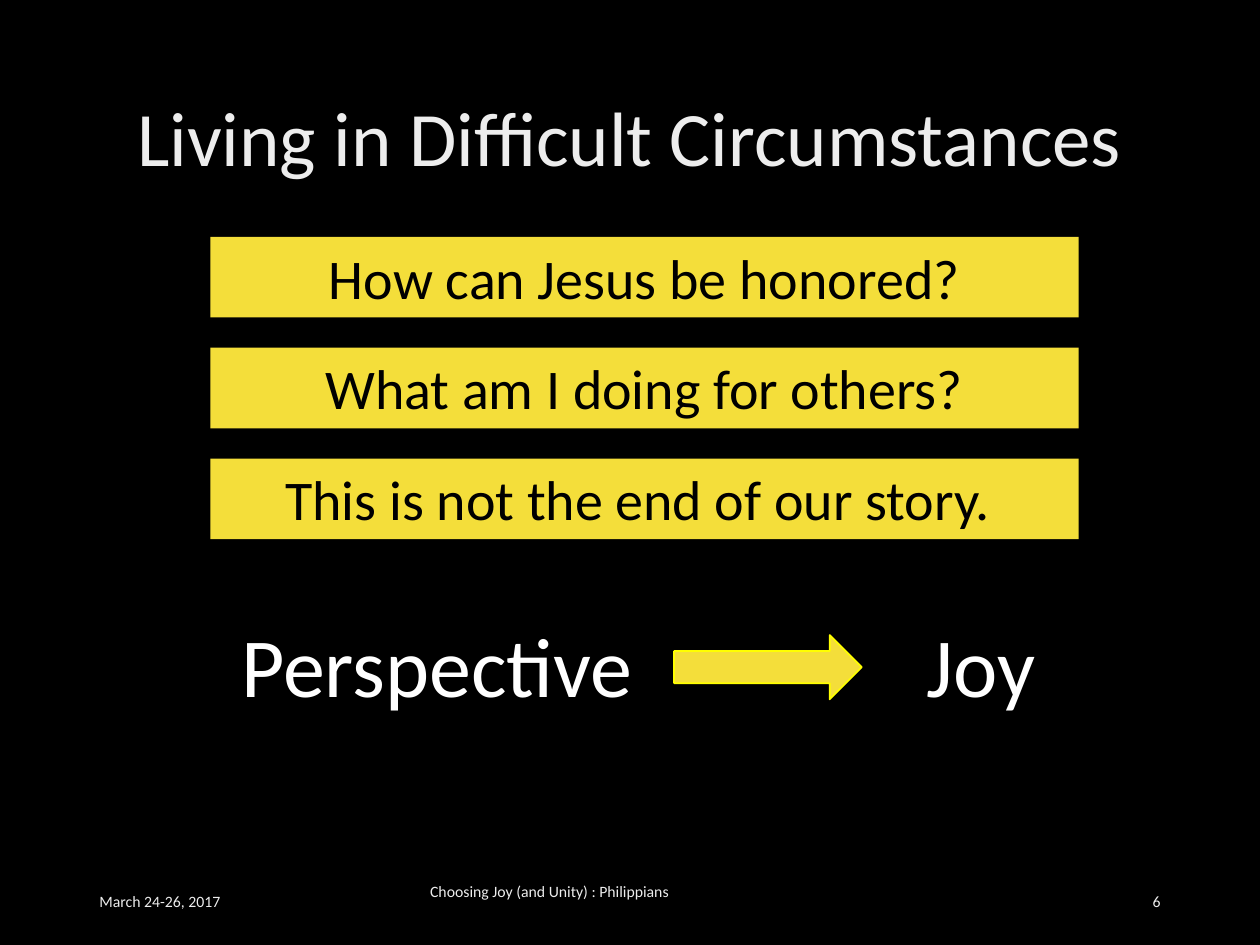
"""Builds the slide on living in difficult circumstances."""
import pptx
import pptx.util
import pptx.dml.color
import pptx.enum.shapes
import pptx.enum.text
from pptx.util import Inches

SHAPE = pptx.enum.shapes.MSO_SHAPE
ANCHOR = pptx.enum.text.MSO_ANCHOR
ALIGN = pptx.enum.text.PP_ALIGN
YELLOW = "F4DE3A"
PALE = "EDEDED"


def rgb(value):
    return pptx.dml.color.RGBColor.from_string(value)


def write(sp, text, size=9, color=PALE, align=ALIGN.CENTER,
          anchor=ANCHOR.MIDDLE, wrap=True, spacing=None):
    tf = sp.text_frame
    tf.word_wrap = wrap
    tf.vertical_anchor = anchor
    p = tf.paragraphs[0]
    p.alignment = align
    p.line_spacing = spacing
    r = p.add_run()
    r.text = text
    r.font.name = "Calibri"
    r.font.size = pptx.util.Pt(size)
    r.font.color.rgb = rgb(color)


prs = pptx.Presentation()
prs.slide_width = Inches(10)
prs.slide_height = Inches(7.5)
s = prs.slides.add_slide(prs.slide_layouts[6])
s.background.fill.solid()
s.background.fill.fore_color.rgb = rgb("000000")

sp = s.shapes.add_textbox(Inches(0.69), Inches(0.4), Inches(8.62), Inches(1.45))
write(sp, "Living in Difficult Circumstances", size=44, spacing=0.9)

questions = ["How can Jesus be honored?", "What am I doing for others?",
             "This is not the end of our story. "]
for i, question in enumerate(questions):
    sp = s.shapes.add_shape(SHAPE.RECTANGLE, Inches(1.67), Inches(1.88 + 0.88 * i),
                            Inches(6.89), Inches(0.64))
    sp.shadow.inherit = False
    sp.fill.solid()
    sp.fill.fore_color.rgb = rgb(YELLOW)
    sp.line.fill.background()
    write(sp, question, size=32, color="000000", anchor=ANCHOR.TOP)

for word, left, width in [("Perspective", 1.79, 3.36), ("Joy", 7.24, 1.09)]:
    sp = s.shapes.add_textbox(Inches(left), Inches(4.83), Inches(width), Inches(0.88))
    tf = sp.text_frame
    tf.margin_left = tf.margin_right = Inches(0.07)
    tf.margin_top = tf.margin_bottom = Inches(0.04)
    write(sp, word, size=48, color="FFFFFF", anchor=ANCHOR.TOP, wrap=False)

sp = s.shapes.add_shape(SHAPE.RIGHT_ARROW, Inches(5.35), Inches(5.04),
                        Inches(1.49), Inches(0.51))
sp.shadow.inherit = False
sp.fill.solid()
sp.fill.fore_color.rgb = rgb(YELLOW)
sp.line.color.rgb = rgb("FFFF00")
sp.line.width = pptx.util.Pt(1)

footers = [("March 24-26, 2017", 0.69, 6.95, 2.25, ALIGN.LEFT),
           ("Choosing Joy (and Unity) : Philippians", 2.67, 6.87, 3.38, ALIGN.CENTER),
           ("6", 7.06, 6.95, 2.25, ALIGN.RIGHT)]
for text, left, top, width, align in footers:
    sp = s.shapes.add_textbox(Inches(left), Inches(top), Inches(width), Inches(0.4))
    write(sp, text, align=align)

prs.save("out.pptx")
